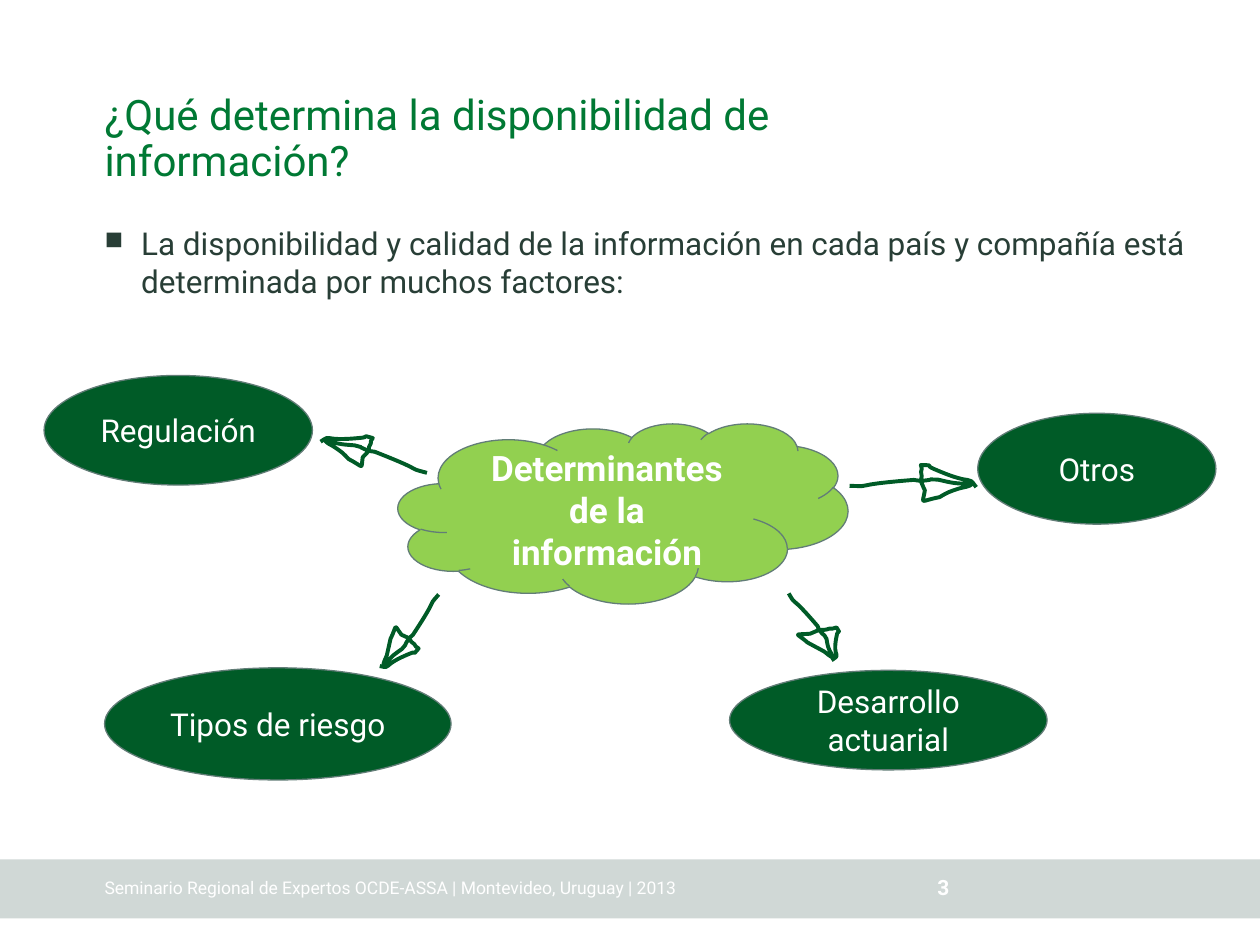
from dataclasses import dataclass

import pptx
import pptx.dml.color
import pptx.enum.shapes
import pptx.enum.text
import pptx.oxml
import pptx.oxml.ns
import pptx.slide
import pptx.util

RGBColor = pptx.dml.color.RGBColor
Shape = pptx.enum.shapes.MSO_SHAPE
Align = pptx.enum.text.PP_ALIGN
Anchor = pptx.enum.text.MSO_ANCHOR
qn = pptx.oxml.ns.qn

WHITE = RGBColor(0xFF, 0xFF, 0xFF)
FOOTER_GREY = RGBColor(0xD0, 0xD8, 0xD6)
TITLE_GREEN = RGBColor(0x00, 0x79, 0x34)
BODY_GREEN = RGBColor(0x28, 0x3E, 0x36)
DARK_GREEN = RGBColor(0x00, 0x5B, 0x27)
LIGHT_GREEN = RGBColor(0x92, 0xD0, 0x50)
OUTLINE_GREY = RGBColor(0x62, 0x7D, 0x77)

# Hand-drawn arrow on a 44 x 54 field: a start point, then cubic curves
ARROW_FIELD = (44, 54)
ARROW_START = (1, 2)
ARROW_CURVES = [
    (8, 14, 0, 0, 24, 28), (24, 29, 25, 30, 25, 31), (33, 40, 26, 30, 31, 38),
    (32, 44, 32, 45, 35, 50), (35, 51, 38, 54, 37, 53), (33, 52, 32, 50, 29, 48),
    (23, 44, 23, 44, 16, 41), (7, 33, 4, 35, 18, 34), (20, 33, 23, 32, 25, 31),
    (28, 31, 31, 31, 33, 30), (35, 30, 37, 30, 39, 29), (43, 36, 40, 29, 39, 36),
    (35, 55, 44, 49, 35, 55),
]


@dataclass
class SlideBuilder:
    """Draws on a grid of 100 columns by 75 rows; boxes are (column, row, columns, rows)."""

    slide: pptx.slide.Slide
    cell: int = pptx.util.Inches(0.1)
    font_name: str = "Roboto"

    def grid(self, box):
        return [round(length * self.cell) for length in box]

    def fill_text(self, frame, text, size, color, bold=False, align=Align.LEFT):
        paragraph = frame.paragraphs[0]
        paragraph.text = text
        paragraph.alignment = align
        font = paragraph.font
        font.name, font.size, font.bold = self.font_name, pptx.util.Pt(size), bold
        font.color.rgb = color
        return paragraph

    def text(self, box, text, size, color, anchor=Anchor.BOTTOM, wrap=True, bold=False):
        frame = self.slide.shapes.add_textbox(*self.grid(box)).text_frame
        frame.margin_left = frame.margin_top = frame.margin_right = frame.margin_bottom = 0
        frame.word_wrap = wrap
        frame.vertical_anchor = anchor
        return self.fill_text(frame, text, size, color, bold)

    def bullet(self, box, text, size, color):
        paragraph = self.text(box, text, size, color, Anchor.TOP)
        properties = paragraph._p.get_or_add_pPr()
        indent = pptx.util.Inches(0.29)
        properties.set("marL", str(indent))
        properties.set("indent", str(-indent))
        namespace = pptx.oxml.ns.nsdecls("a")
        for position, markup in enumerate((f'<a:buSzPct {namespace} val="80000"/>',
                                           f'<a:buChar {namespace} char="■"/>')):
            properties.insert(position, pptx.oxml.parse_xml(markup))

    def shape(self, kind, box, fill, outline=None):
        shape = self.slide.shapes.add_shape(kind, *self.grid(box))
        shape.shadow.inherit = False
        shape.fill.solid()
        shape.fill.fore_color.rgb = fill
        if outline is None:
            shape.line.fill.background()
        else:
            shape.line.color.rgb = outline
            shape.line.width = pptx.util.Pt(0.75)
        return shape

    def bubble(self, kind, box, text, fill, size=18, bold=False):
        frame = self.shape(kind, box, fill, OUTLINE_GREY).text_frame
        frame.word_wrap = True
        frame.vertical_anchor = Anchor.MIDDLE
        self.fill_text(frame, text, size, WHITE, bold, Align.CENTER)

    def arrow(self, box, rotation=0, mirrored=False):
        left, top, width, height = self.grid(box)
        builder = self.slide.shapes.build_freeform(left, top)
        builder.add_line_segments([(left + width, top), (left + width, top + height)])
        shape = builder.convert_to_shape()
        shape.shadow.inherit = False
        shape.fill.background()
        shape.line.color.rgb = DARK_GREEN
        shape.line.width = pptx.util.Pt(2.25)
        shape.rotation = rotation

        # Swap the straight outline for the curved sketch
        outline = next(shape._element.iter(qn("a:path")))
        for child in list(outline):
            outline.remove(child)
        for name, length in zip("wh", ARROW_FIELD):
            outline.set(name, str(length))
        steps = [("a:moveTo", ARROW_START)] + [("a:cubicBezTo", c) for c in ARROW_CURVES]
        for tag, numbers in steps:
            step = outline.makeelement(qn(tag), {})
            outline.append(step)
            for x, y in zip(numbers[::2], numbers[1::2]):
                x = ARROW_FIELD[0] - x if mirrored else x
                step.append(step.makeelement(qn("a:pt"), {"x": str(x), "y": str(y)}))


def main():
    presentation = pptx.Presentation()
    presentation.slide_width = pptx.util.Inches(10)
    presentation.slide_height = pptx.util.Inches(7.5)
    page = SlideBuilder(presentation.slides.add_slide(presentation.slide_layouts[6]))

    # Footer
    page.shape(Shape.RECTANGLE, (0, 68.2, 100, 4.7), FOOTER_GREY)
    page.text((8.3, 69.8, 64.6, 1.5),
              "Seminario Regional de Expertos OCDE-ASSA | Montevideo, Uruguay | 2013",
              10, WHITE, wrap=False)
    page.text((74.4, 69.4, 2, 2), "3", 12, WHITE, wrap=False, bold=True)

    # Title and introduction
    title = page.text((8.3, 5.2, 63.8, 9.5),
                      "¿Qué determina la disponibilidad de información?", 24, TITLE_GREEN)
    title.line_spacing = 0.9
    page.bullet((8.3, 17.8, 85.8, 47.3),
                "La disponibilidad y calidad de la información en cada país y compañía "
                "está determinada por muchos factores:", 18, BODY_GREEN)

    # Central topic
    page.bubble(Shape.CLOUD, (31.6, 33.6, 35.7, 14.3), "Determinantes de la información",
                LIGHT_GREEN, size=20, bold=True)

    # Arrows from the topic to its factors
    page.arrow((62.5, 46.9, 4.4, 5.4))
    page.arrow((28.3, 31.7, 3.2, 8.6), rotation=90, mirrored=True)
    page.arrow((31.1, 46.7, 3.4, 7), rotation=60.4)
    page.arrow((70.4, 33.3, 3.8, 9.8), rotation=287.6)

    # Factors
    for factor, box in (
        ("Regulación", (3.5, 29.8, 21.3, 8.7)),
        ("Tipos de riesgo", (8.3, 53, 27.5, 8.9)),
        ("Desarrollo actuarial", (57.9, 53.2, 25.2, 7.9)),
        ("Otros", (77.6, 32.8, 18.9, 8.8)),
    ):
        page.bubble(Shape.OVAL, box, factor, DARK_GREEN)

    presentation.save("out.pptx")


if __name__ == "__main__":
    main()
